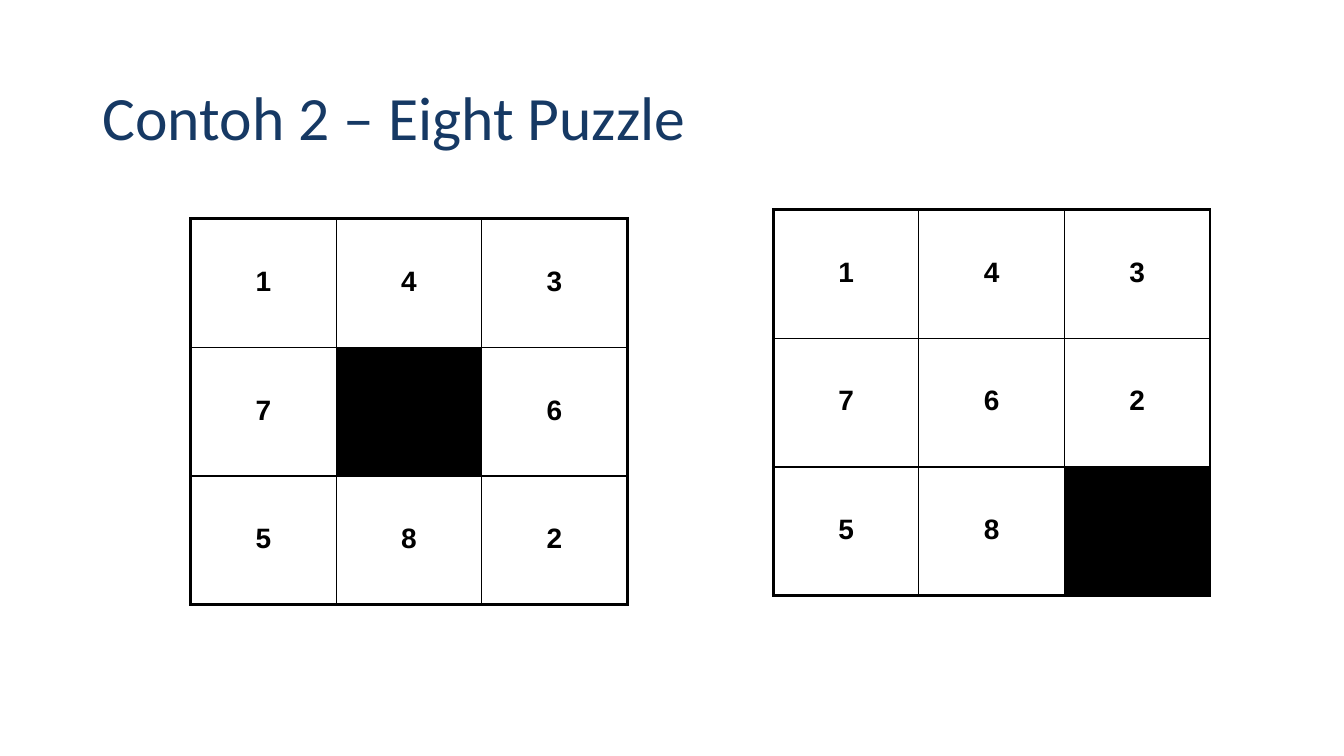
import pptx
import pptx.dml.color
import pptx.enum.text
import pptx.oxml.ns
import pptx.util
from lxml import etree

Inches, Pt = pptx.util.Inches, pptx.util.Pt

# Content: None marks the empty square of a puzzle
TITLE = "Contoh 2 – Eight Puzzle"
PUZZLES = [
    {"left": 1.89, "top": 2.17, "tiles": [[1, 4, 3], [7, None, 6], [5, 8, 2]]},
    {"left": 7.67, "top": 2.08, "tiles": [[1, 4, 3], [7, 6, 2], [5, 8, None]]},
]
SLIDE_WIDTH, SLIDE_HEIGHT = 13.33, 7.5
TILE_WIDTH, TILE_HEIGHT = 4.33 / 3, 3.83 / 3
NAVY, BLACK = "163964", "000000"
OUTER_LINE, INNER_LINE = 2.25, 1


def color(value):
    return pptx.dml.color.RGBColor.from_string(value)


def style_text(paragraph, font_name, size, hex_color, bold=False):
    for run in paragraph.runs:
        run.font.name = font_name
        run.font.size = Pt(size)
        run.font.bold = bold
        run.font.color.rgb = color(hex_color)


def set_borders(cell, widths):
    """Put left, right, top and bottom lines ahead of the cell's fill."""
    properties = cell._tc.get_or_add_tcPr()
    qn = pptx.oxml.ns.qn
    for index, (side, width) in enumerate(widths.items()):
        line = etree.Element(qn(f"a:ln{side}"), w=str(int(Pt(width))))
        fill = etree.SubElement(line, qn("a:solidFill"))
        etree.SubElement(fill, qn("a:srgbClr"), val=BLACK)
        properties.insert(index, line)


def add_title(slide):
    box = slide.shapes.add_textbox(Inches(0.92), Inches(0.54), Inches(11.5), Inches(1.31))
    frame = box.text_frame
    frame.word_wrap = True
    frame.vertical_anchor = pptx.enum.text.MSO_ANCHOR.MIDDLE
    frame.text = TITLE
    paragraph = frame.paragraphs[0]
    paragraph.line_spacing = 0.9
    style_text(paragraph, "Calibri", 44, NAVY)


def fill_tile(cell, number):
    cell.margin_left = cell.margin_right = Inches(0.13)
    cell.margin_top = cell.margin_bottom = Inches(0.05)
    cell.vertical_anchor = pptx.enum.text.MSO_ANCHOR.MIDDLE
    if number is None:
        cell.fill.solid()
        cell.fill.fore_color.rgb = color(BLACK)
        return
    cell.fill.background()
    cell.text_frame.text = str(number)
    paragraph = cell.text_frame.paragraphs[0]
    paragraph.alignment = pptx.enum.text.PP_ALIGN.CENTER
    paragraph.line_spacing = 0.89
    style_text(paragraph, "Arial", 20, BLACK, bold=True)


def add_puzzle(slide, left, top, tiles):
    size = len(tiles)
    table = slide.shapes.add_table(
        size, size, Inches(left), Inches(top),
        Inches(size * TILE_WIDTH), Inches(size * TILE_HEIGHT)).table
    table.first_row = table.horz_banding = False
    for row, numbers in enumerate(tiles):
        for column, number in enumerate(numbers):
            cell = table.cell(row, column)
            fill_tile(cell, number)
            # Edges of the puzzle are thicker than the lines inside it
            on_edge = {"L": column == 0, "R": column == size - 1,
                       "T": row == 0, "B": row == size - 1}
            set_borders(cell, {side: OUTER_LINE if edge else INNER_LINE
                               for side, edge in on_edge.items()})


def main():
    presentation = pptx.Presentation()
    presentation.slide_width = Inches(SLIDE_WIDTH)
    presentation.slide_height = Inches(SLIDE_HEIGHT)
    slide = presentation.slides.add_slide(presentation.slide_layouts[6])
    add_title(slide)
    for puzzle in PUZZLES:
        add_puzzle(slide, **puzzle)
    presentation.save("out.pptx")


if __name__ == "__main__":
    main()
